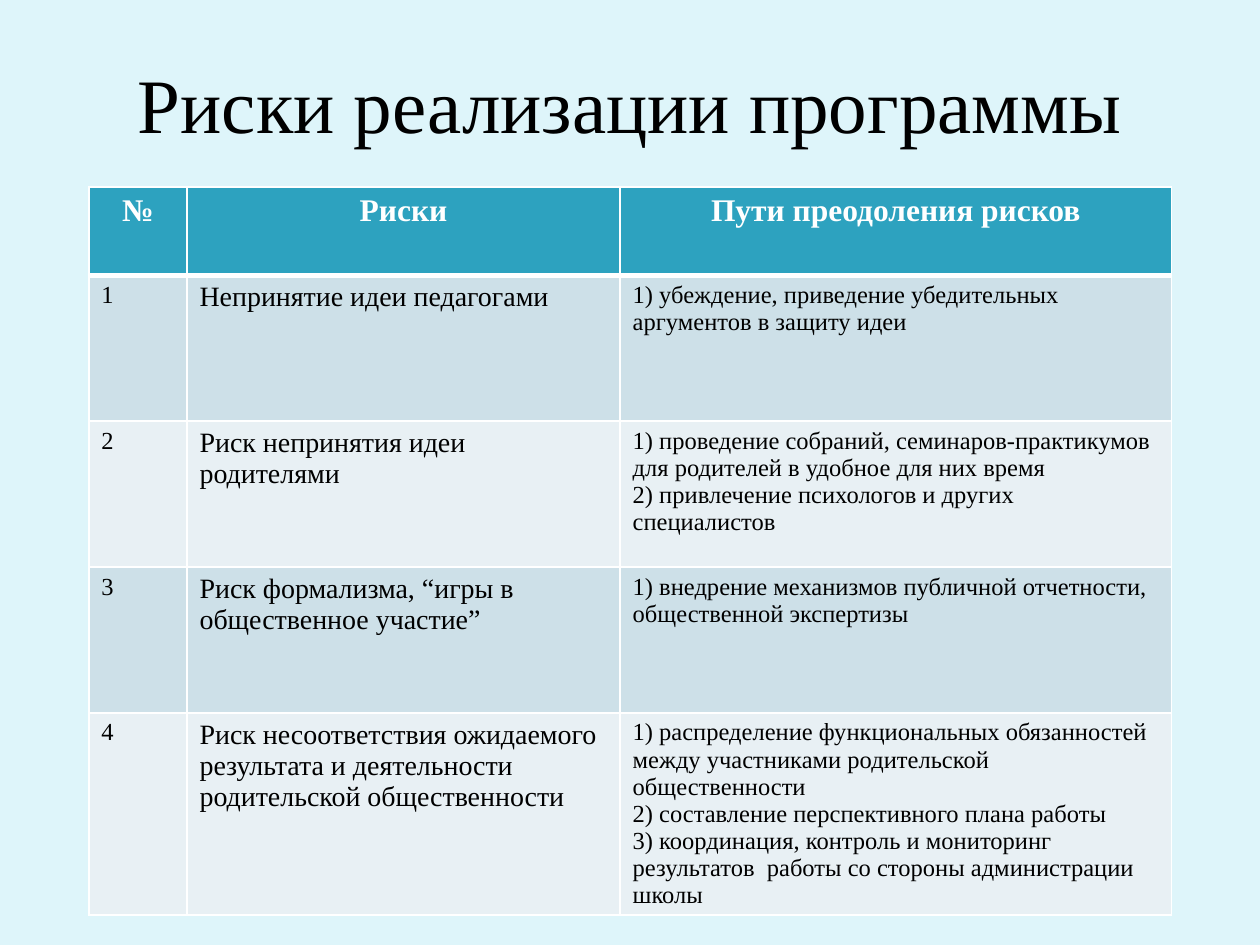
"""Build the slide on the risks of carrying out the programme."""
from dataclasses import dataclass

from lxml import etree
from pptx import Presentation
from pptx.dml.color import RGBColor
from pptx.enum.text import MSO_ANCHOR, PP_ALIGN
from pptx.oxml.ns import qn
from pptx.slide import Slide
from pptx.table import _Cell
from pptx.text.text import _Paragraph
from pptx.util import Cm, Pt

CENTER, LEFT = PP_ALIGN.CENTER, PP_ALIGN.LEFT
MIDDLE = MSO_ANCHOR.MIDDLE
TITLE_ONLY_LAYOUT = 5


@dataclass(frozen=True)
class Theme:
    font: str = "Times New Roman"
    background: str = "DEF5FA"
    text: str = "000000"
    header_text: str = "FFFFFF"
    header_fill: str = "2DA2BF"
    band_fills: tuple[str, str] = ("CDE0E8", "E8F0F4")
    border: str = "FFFFFF"
    border_width: float = 1
    header_border_width: float = 3
    title_size: float = 44
    header_size: float = 18
    risk_size: float = 16
    body_size: float = 14


@dataclass(frozen=True)
class Risk:
    name: str
    remedies: tuple[str, ...]


@dataclass(frozen=True)
class TextStyle:
    size: float
    color: str
    bold: bool = False
    alignment: PP_ALIGN = LEFT


THEME = Theme()
TITLE = "Риски реализации программы"
HEADERS = ("№", "Риски", "Пути преодоления рисков")
COLUMN_WIDTHS = (Cm(1.98), Cm(8.73), Cm(11.12))
HEADER_HEIGHT, RISK_HEIGHT = Cm(1.78), Cm(2.94)
RISKS = (
    Risk(
        "Непринятие идеи педагогами",
        ("1) убеждение, приведение убедительных аргументов в защиту идеи",),
    ),
    Risk(
        "Риск непринятия идеи родителями",
        (
            "1) проведение собраний, семинаров-практикумов для родителей в удобное для них время",
            "2) привлечение психологов и других специалистов",
        ),
    ),
    Risk(
        "Риск формализма, “игры в общественное участие”",
        ("1) внедрение механизмов публичной отчетности, общественной экспертизы",),
    ),
    Risk(
        "Риск несоответствия ожидаемого результата и деятельности родительской общественности",
        (
            "1) распределение функциональных обязанностей между участниками родительской общественности",
            "2) составление перспективного плана работы",
            "3) координация, контроль и мониторинг  результатов  работы со стороны администрации школы",
        ),
    ),
)


def format_paragraph(paragraph: _Paragraph, style: TextStyle) -> None:
    paragraph.alignment = style.alignment
    paragraph.font.name = THEME.font
    paragraph.font.size = Pt(style.size)
    paragraph.font.bold = style.bold
    paragraph.font.color.rgb = RGBColor.from_string(style.color)


def add_borders(cell: _Cell, top: float, bottom: float) -> None:
    properties = cell._tc.get_or_add_tcPr()
    side = THEME.border_width
    for tag, width in (("lnL", side), ("lnR", side), ("lnT", top), ("lnB", bottom)):
        line = etree.SubElement(properties, qn(f"a:{tag}"), w=str(Pt(width)))
        fill = etree.SubElement(line, qn("a:solidFill"))
        etree.SubElement(fill, qn("a:srgbClr"), val=THEME.border)


def fill_cell(cell: _Cell, lines: tuple[str, ...], style: TextStyle, fill: str) -> None:
    cell.text_frame.text = "\n".join(lines)
    for paragraph in cell.text_frame.paragraphs:
        format_paragraph(paragraph, style)
    cell.fill.solid()
    cell.fill.fore_color.rgb = RGBColor.from_string(fill)


def add_title(slide: Slide) -> None:
    title = slide.shapes.title
    title.left, title.top, title.width, title.height = Cm(1.27), Cm(0.76), Cm(22.86), Cm(2.62)
    title.text_frame.text = TITLE
    title.text_frame.vertical_anchor = MIDDLE
    format_paragraph(
        title.text_frame.paragraphs[0],
        TextStyle(THEME.title_size, THEME.text, alignment=CENTER),
    )


def add_risk_table(slide: Slide) -> None:
    height = HEADER_HEIGHT + RISK_HEIGHT * len(RISKS)
    table = slide.shapes.add_table(
        len(RISKS) + 1, len(HEADERS), Cm(1.79), Cm(3.77), sum(COLUMN_WIDTHS), height
    ).table
    for column, width in zip(table.columns, COLUMN_WIDTHS):
        column.width = width
    for index, row in enumerate(table.rows):
        row.height = RISK_HEIGHT if index else HEADER_HEIGHT
        top = THEME.header_border_width if index == 1 else THEME.border_width
        bottom = THEME.border_width if index else THEME.header_border_width
        for cell in row.cells:
            add_borders(cell, top, bottom)

    header = TextStyle(THEME.header_size, THEME.header_text, True, CENTER)
    for cell, label in zip(table.rows[0].cells, HEADERS):
        fill_cell(cell, (label,), header, THEME.header_fill)

    body = TextStyle(THEME.body_size, THEME.text)
    name = TextStyle(THEME.risk_size, THEME.text)
    for number, risk in enumerate(RISKS, start=1):
        fill = THEME.band_fills[(number - 1) % 2]
        contents = (((str(number),), body), ((risk.name,), name), (risk.remedies, body))
        for cell, (lines, style) in zip(table.rows[number].cells, contents):
            fill_cell(cell, lines, style, fill)


def main() -> None:
    presentation = Presentation()
    presentation.slide_width, presentation.slide_height = Cm(25.4), Cm(19.05)
    slide = presentation.slides.add_slide(presentation.slide_layouts[TITLE_ONLY_LAYOUT])
    slide.background.fill.solid()
    slide.background.fill.fore_color.rgb = RGBColor.from_string(THEME.background)
    add_title(slide)
    add_risk_table(slide)
    presentation.save("out.pptx")


if __name__ == "__main__":
    main()
